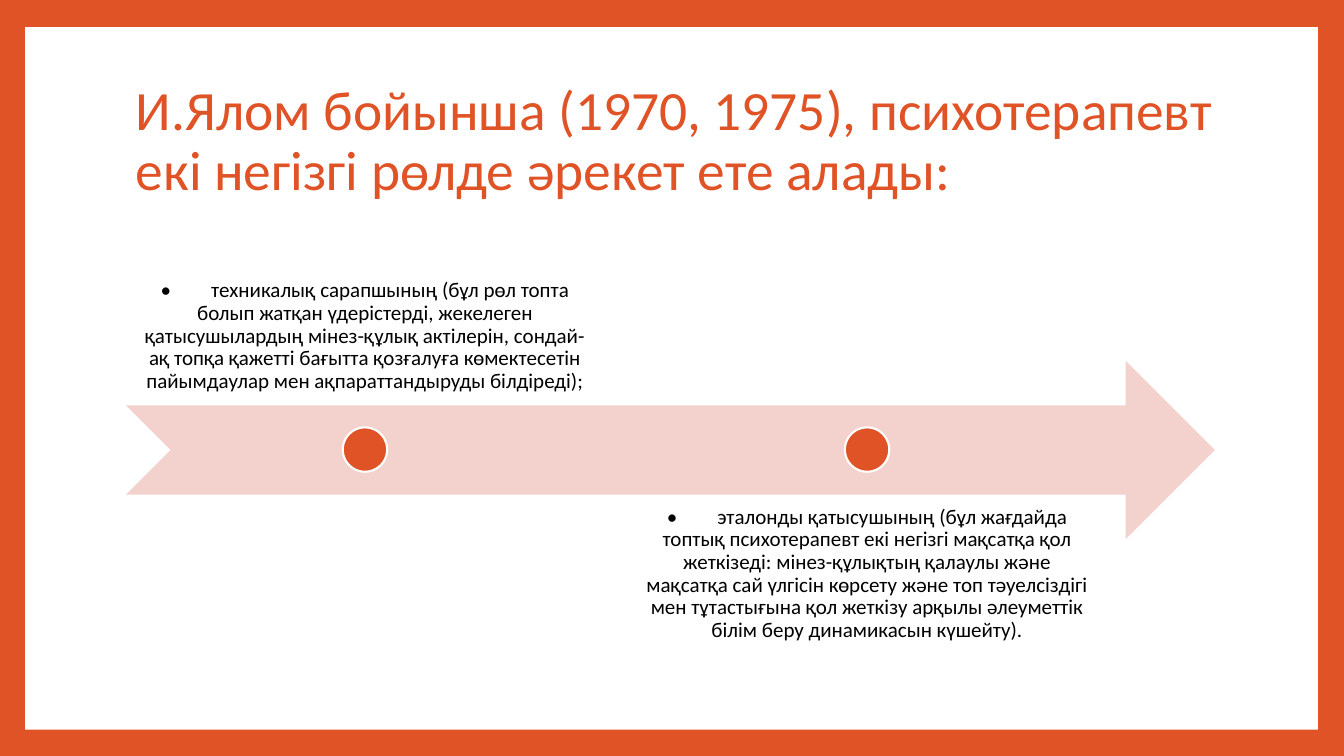
from dataclasses import dataclass

from pptx import Presentation, util as u
from pptx.dml.color import RGBColor
from pptx.enum import shapes, text


@dataclass(frozen=True)
class Theme:
    font: str = "Calibri"
    accent: str = "DF5327"
    pale: str = "F3D1CD"
    paper: str = "FFFFFF"
    ink: str = "000000"
    title_size: float = 39.6
    body_size: float = 15
    outline: float = 1.5


class RoleSlide:
    def __init__(self, slide, theme):
        self.slide = slide
        self.theme = theme

    def background(self, color):
        fill = self.slide.background.fill
        fill.solid()
        fill.fore_color.rgb = RGBColor.from_string(color)

    def shape(self, kind, box, color, outline=None):
        form = self.slide.shapes.add_shape(kind, *map(u.Inches, box))
        form.shadow.inherit = False
        form.fill.solid()
        form.fill.fore_color.rgb = RGBColor.from_string(color)
        if outline:
            form.line.color.rgb = RGBColor.from_string(outline)
            form.line.width = u.Pt(self.theme.outline)
        else:
            form.line.fill.background()

    def text(self, words, box, size, color, frame_format, align):
        frame = self.slide.shapes.add_textbox(*map(u.Inches, box)).text_frame
        for name, value in {"word_wrap": True, **frame_format}.items():
            setattr(frame, name, value)
        paragraph = frame.paragraphs[0]
        paragraph.text = words
        paragraph.alignment = align
        paragraph.line_spacing = 0.9
        font = paragraph.runs[0].font
        for name, value in {"name": self.theme.font, "size": u.Pt(size)}.items():
            setattr(font, name, value)
        font.color.rgb = RGBColor.from_string(color)


ROLES = [
    (1.25, 2.25, text.MSO_ANCHOR.BOTTOM,
     "•\tтехникалық сарапшының (бұл рөл топта болып жатқан үдерістерді, "
     "жекелеген қатысушылардың мінез-құлық актілерін, сондай-ақ топқа қажетті "
     "бағытта қозғалуға көмектесетін пайымдаулар мен ақпараттандыруды білдіреді);"),
    (6.23, 4.9, text.MSO_ANCHOR.TOP,
     "•\tэталонды қатысушының (бұл жағдайда топтық психотерапевт екі негізгі "
     "мақсатқа қол жеткізеді: мінез-құлықтың қалаулы және мақсатқа сай үлгісін "
     "көрсету және топ тәуелсіздігі мен тұтастығына қол жеткізу арқылы "
     "әлеуметтік білім беру динамикасын күшейту)."),
]
ROLE_WIDTH, ROLE_HEIGHT = 4.74, 1.77
DOT, DOT_TOP = 0.44, 4.24


def main():
    deck = Presentation()
    deck.slide_width, deck.slide_height = u.Inches(13.33), u.Inches(7.5)
    theme = Theme()
    page = RoleSlide(deck.slides.add_slide(deck.slide_layouts[6]), theme)
    kinds = shapes.MSO_SHAPE

    page.background(theme.accent)
    page.shape(kinds.RECTANGLE, (0.25, 0.27, 12.82, 6.97), theme.paper)
    page.text(
        "И.Ялом бойынша (1970, 1975), психотерапевт екі негізгі рөлде әрекет ете алады:",
        (1.25, 0.67, 11.4, 1.48), theme.title_size, theme.accent,
        {"vertical_anchor": text.MSO_ANCHOR.MIDDLE}, text.PP_ALIGN.LEFT)
    page.shape(kinds.NOTCHED_RIGHT_ARROW, (1.25, 3.58, 10.8, 1.77), theme.pale)

    sides = ("left", "top", "right", "bottom")
    margins = {f"margin_{side}": u.Inches(0.12) for side in sides}
    for left, top, anchor, role in ROLES:
        page.text(role, (left, top, ROLE_WIDTH, ROLE_HEIGHT), theme.body_size,
                  theme.ink, {"vertical_anchor": anchor, **margins},
                  text.PP_ALIGN.CENTER)
        dot_left = left + (ROLE_WIDTH - DOT) / 2
        page.shape(kinds.OVAL, (dot_left, DOT_TOP, DOT, DOT), theme.accent, theme.paper)

    deck.save("out.pptx")


if __name__ == "__main__":
    main()
